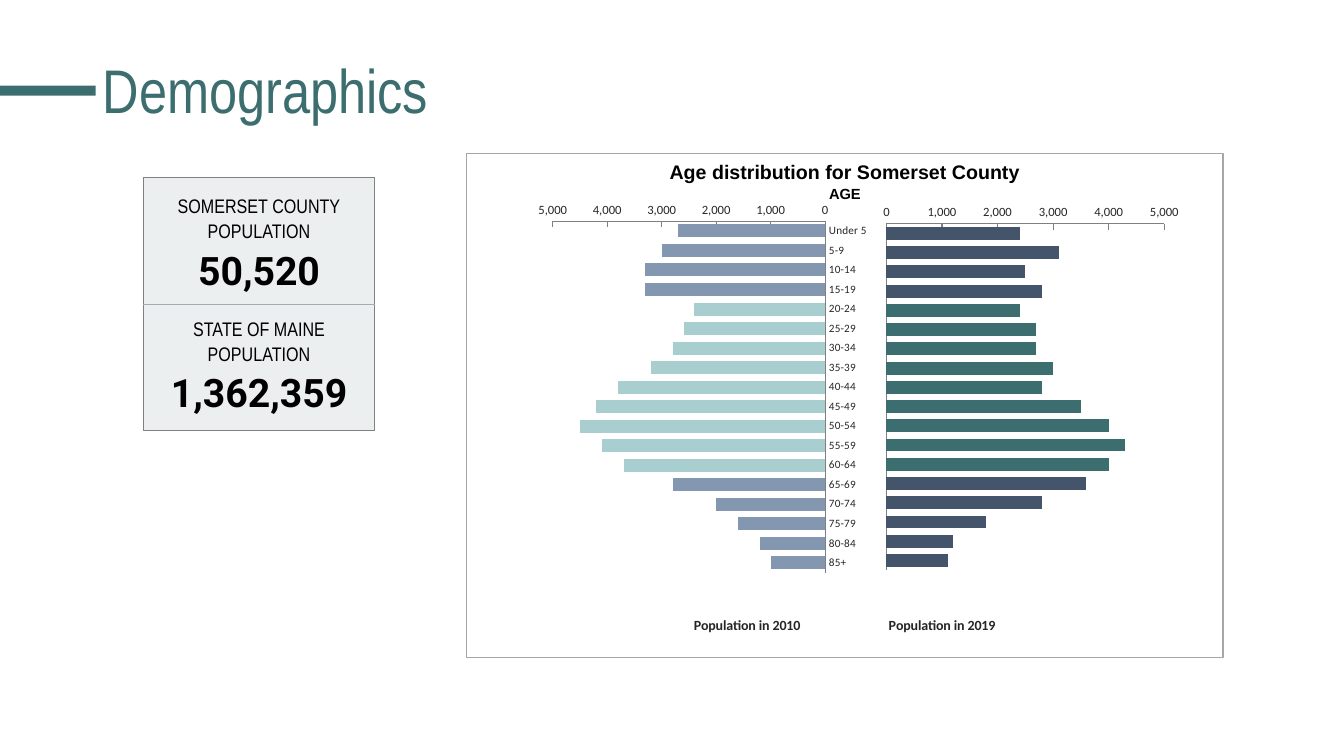
from dataclasses import dataclass

from lxml import etree
from pptx import Presentation, util as u
from pptx.chart.data import CategoryChartData
from pptx.dml.color import RGBColor
from pptx.enum import chart as ch, shapes, text
from pptx.oxml import parse_xml
from pptx.oxml.ns import nsdecls, qn

WIDE, HIGH = u.Inches(13.33), u.Inches(7.5)
TEAL, GREY, INK = "3D6E6F", "808080", "262626"
MID = range(4, 13)
AGES = ["Under 5"] + [f"{a}-{a + 4}" for a in range(5, 85, 5)] + ["85+"]


@dataclass
class Area:
    left: float
    top: float
    width: float
    height: float

    def box(self) -> tuple[int, int, int, int]:
        return (int(WIDE * self.left / 100), int(HIGH * self.top / 100),
                int(WIDE * self.width / 100), int(HIGH * self.height / 100))


@dataclass
class Line:
    words: str
    size: float
    face: str
    bold: bool = False
    color: str = "000000"
    above: float = 0
    space: float = 1.07
    align: int = text.PP_ALIGN.CENTER


@dataclass
class Half:
    area: Area
    plot: tuple[float, float, float, float]
    year: int
    name: tuple[float, float]
    outer: str
    inner: str
    flip: bool
    counts: list[int]


def put(item, **vals) -> None:
    for key, val in vals.items():
        setattr(item, key, val)


def paint(fill, code: str) -> None:
    fill.solid()
    fill.fore_color.rgb = RGBColor.from_string(code)


def stroke(line, code: str, width: float) -> None:
    paint(line.fill, code)
    line.width = u.Pt(width)


def style(font, size: float, face: str, bold: bool, code: str) -> None:
    put(font, size=u.Pt(size), name=face, bold=bold)
    font.color.rgb = RGBColor.from_string(code)


def write(frame, lines: list[Line]) -> None:
    frame.word_wrap = True
    for i, line in enumerate(lines):
        para = frame.add_paragraph() if i else frame.paragraphs[0]
        put(para, alignment=line.align, line_spacing=line.space)
        if line.above:
            para.space_before = u.Pt(line.above)
        run = para.add_run()
        run.text = line.words
        style(run.font, line.size, line.face, line.bold, line.color)


def block(slide, area: Area, fill: str = "", edge: str = "", width: float = 0):
    shape = slide.shapes.add_shape(shapes.MSO_SHAPE.RECTANGLE, *area.box())
    shape.shadow.inherit = False
    if fill:
        paint(shape.fill, fill)
    else:
        shape.fill.background()
    if edge:
        stroke(shape.line, edge, width)
    else:
        shape.line.fill.background()
    return shape


def layout(node, spot: int, vals: dict[str, str | float]) -> None:
    old = node.find(qn("c:layout"))
    if old is not None:
        node.remove(old)
    new = etree.Element(qn("c:layout"))
    manual = etree.SubElement(new, qn("c:manualLayout"))
    for key, val in vals.items():
        etree.SubElement(manual, qn(f"c:{key}")).set("val", str(val))
    node.insert(spot, new)


def graph(slide, half: Half) -> None:
    data = CategoryChartData(number_format="#,##0")
    data.categories = AGES
    data.add_series(f"Population in {half.year}", half.counts)
    chart = slide.shapes.add_chart(
        ch.XL_CHART_TYPE.BAR_CLUSTERED, *half.area.box(), data).chart
    put(chart, has_legend=False, has_title=False)
    style(chart.font, 10, "Calibri", False, "000000")
    root = chart._chartSpace
    root.chart.addnext(parse_xml(
        f'<c:spPr {nsdecls("c", "a")}><a:noFill/><a:ln><a:noFill/></a:ln></c:spPr>'))
    edges = dict(zip("xywh", half.plot))
    layout(root.chart.plotArea, 0, {
        "layoutTarget": "inner", "xMode": "edge", "yMode": "edge", **edges})

    plot = chart.plots[0]
    put(plot, gap_width=50, vary_by_categories=False)
    bars = plot.series[0]
    paint(bars.format.fill, half.outer)
    for i in MID:
        paint(bars.points[i].format.fill, half.inner)

    ages, count = chart.category_axis, chart.value_axis
    put(ages, reverse_order=True, crosses=ch.XL_AXIS_CROSSES.MAXIMUM,
        major_tick_mark=ch.XL_TICK_MARK.NONE)
    if not half.flip:
        ages.tick_label_position = ch.XL_TICK_LABEL_POSITION.NONE
    put(count, reverse_order=half.flip, minimum_scale=0, maximum_scale=5000,
        major_unit=1000, major_tick_mark=ch.XL_TICK_MARK.INSIDE)
    put(count.tick_labels, number_format="#,##0", number_format_is_linked=False)
    for axis, size in ((ages, 8), (count, 9)):
        put(axis, has_major_gridlines=False, minor_tick_mark=ch.XL_TICK_MARK.NONE)
        stroke(axis.format.line, GREY, 0.75)
        style(axis.tick_labels.font, size, "Calibri", False, INK)

    title = count.axis_title
    run = title.text_frame.paragraphs[0].add_run()
    run.text = f"Population in {half.year}"
    style(run.font, 10, "Calibri", True, INK)
    layout(title._element, 1, {
        "xMode": "edge", "yMode": "edge", **dict(zip("xy", half.name))})


HALVES = [
    Half(Area(64.44, 26.8, 24.91, 58.4), (0.061, 0.048, 0.83, 0.785), 2019,
         (0.06, 0.93), "44546A", TEAL, False,
         [2400, 3100, 2500, 2800, 2400, 2700, 2700, 3000, 2800,
          3500, 4000, 4300, 4000, 3600, 2800, 1800, 1200, 1100]),
    Half(Area(38.56, 26.8, 27.38, 58.4), (0.094, 0.04, 0.74, 0.798), 2010,
         (0.47, 0.93), "8497B0", "A8CECF", True,
         [2700, 3000, 3300, 3300, 2400, 2600, 2800, 3200, 3800,
          4200, 4500, 4100, 3700, 2800, 2000, 1600, 1200, 1000]),
]
FACTS = [("SOMERSET COUNTY", "50,520", 0), ("STATE OF MAINE", "1,362,359", 15.5)]


def main() -> None:
    deck = Presentation()
    put(deck, slide_width=WIDE, slide_height=HIGH)
    slide = deck.slides.add_slide(deck.slide_layouts[6])

    block(slide, Area(0, 11.33, 7.13, 1.33), TEAL)
    head = slide.shapes.add_textbox(*Area(6.9, 2.67, 86.27, 19.33).box()).text_frame
    head.vertical_anchor = text.MSO_ANCHOR.MIDDLE
    write(head, [Line("Demographics", 44, "Arial Narrow", color=TEAL,
                      space=0.9, align=text.PP_ALIGN.LEFT)])

    card = block(slide, Area(10.65, 23.47, 17.25, 33.47), "ECEFEF", GREY, 0.75)
    put(card.text_frame, vertical_anchor=text.MSO_ANCHOR.MIDDLE, margin_left=0,
        margin_top=0, margin_right=0, margin_bottom=0)
    write(card.text_frame, [
        line for place, total, gap in FACTS for line in (
            Line(place, 14, "Arial Narrow", above=gap),
            Line("POPULATION", 14, "Arial Narrow"),
            Line(total, 28, "Roboto", True))])

    panel = block(slide, Area(34.73, 20.27, 56.26, 66.67), edge="A6A6A6", width=1)
    panel.text_frame.vertical_anchor = text.MSO_ANCHOR.TOP
    write(panel.text_frame, [
        Line("Age distribution for Somerset County", 14, "Arial", True),
        Line("AGE", 10.5, "Arial", True)])

    rule = slide.shapes.add_connector(shapes.MSO_CONNECTOR.STRAIGHT, 0, 0, 0, 0)
    rule.begin_connect(card, 1)
    rule.end_connect(card, 3)
    stroke(rule.line, "A2ADB1", 0.5)
    etree.SubElement(rule._element.spPr, qn("a:effectLst"))

    for half in HALVES:
        graph(slide, half)
    deck.save("out.pptx")


if __name__ == "__main__":
    main()
